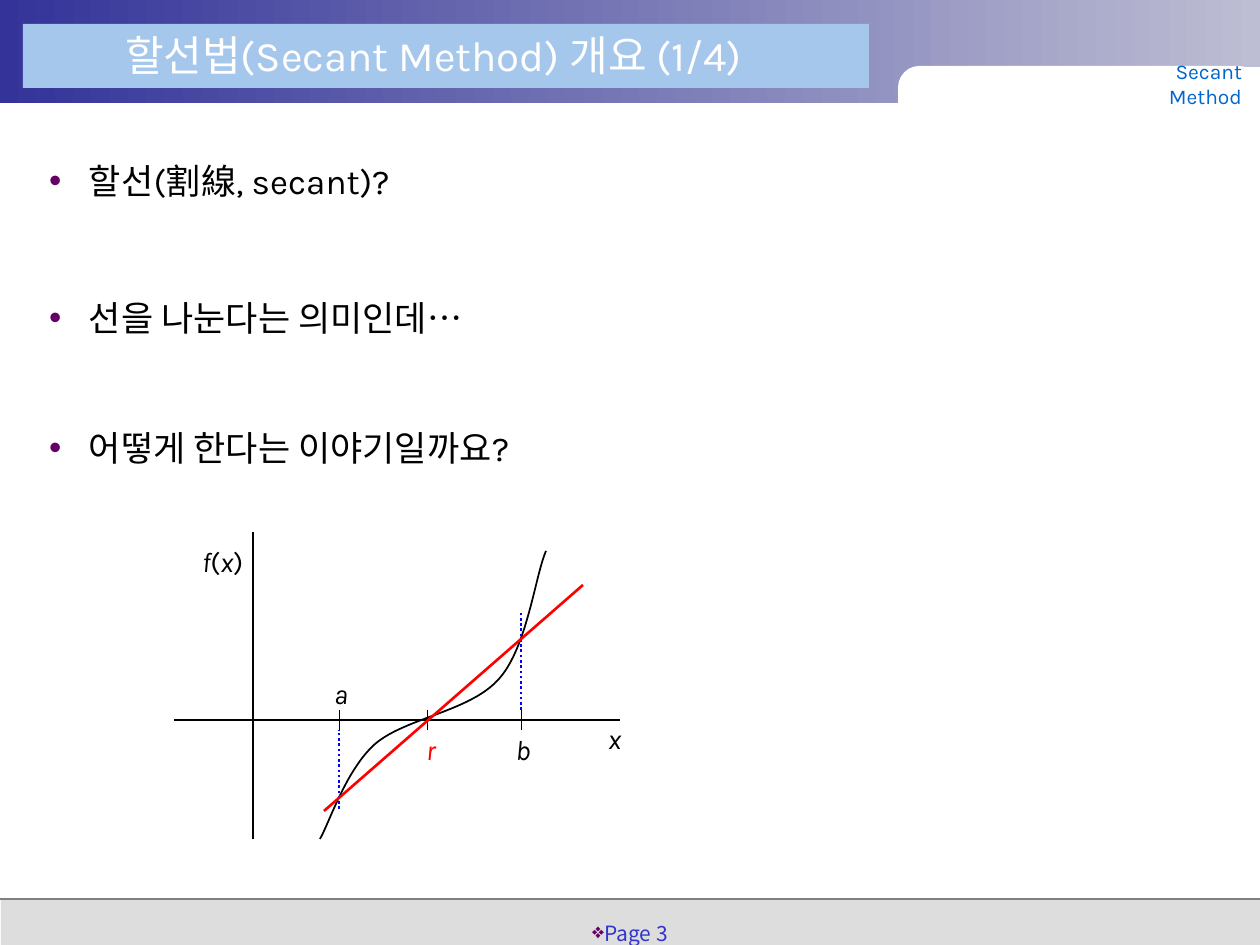
import pptx
import pptx.util
import pptx.dml.color
import pptx.enum.dml
import pptx.enum.shapes
import pptx.enum.text
import pptx.oxml
import pptx.oxml.ns
import lxml.etree

PX = 914400 / 126
SHAPE = pptx.enum.shapes.MSO_SHAPE
ALIGN = pptx.enum.text.PP_ALIGN
ANCHOR = pptx.enum.text.MSO_ANCHOR
DOT = pptx.enum.dml.MSO_LINE.ROUND_DOT


class Theme:
    font, cjk = "Karla", "Noto Sans CJK KR"
    title, body, label, small = 24, 20, 16, 12
    white, black, red, blue = "FFFFFF", "000000", "FF0000", "0000FF"
    navy, haze, panel, foot = "333399", "BDBDD3", "A6C7EC", "DDDDDD"
    gray, bullet, page, topic = "808080", "660066", "3333CC", "0066CC"


TITLE = ("할선법(Secant Method) 개요 (1/4)", (112, 23, 756, 63))
ITEMS = [  # text, top, height
    ("할선(割線, secant)?", 146, 69),
    ("선을 나눈다는 의미인데…", 283, 60),
    ("어떻게 한다는 이야기일까요?", 413, 60),
]
BARS = [  # shape, box, fill
    (SHAPE.RECTANGLE, (1, 900, 1259, 45), Theme.foot),
    (SHAPE.RECTANGLE, (0, 0, 1260, 103), None),
    (SHAPE.ROUNDED_RECTANGLE, (898, 66, 362, 74), Theme.white),
    (SHAPE.RECTANGLE, (1147, 67, 113, 30), Theme.white),
    (SHAPE.RECTANGLE, (23, 24, 846, 64), Theme.panel),
]
AXIS = 720
A, R, B = 339, 427, 521
AXES = [(174, AXIS, 620, AXIS), (253, 839, 253, 532)]
DROPS = [(A, 809, A, AXIS + 10), (B, AXIS - 10, B, 611)]
SECANT = (324, 811, 583, 585)
CURVE = [(320, 839), (329, 824), (345, 772), (374, 745), (404, 718),
         (470, 712), (499, 679), (527, 648), (535, 577), (546, 551)]
LABELS = [  # text, left, top, width, colour
    ("f(x)", 193, 532, 59, Theme.black),
    ("a", 326, 664, 30, Theme.black),
    ("b", 508, 720, 30, Theme.black),
    ("x", 585, 709, 59, Theme.black),
    ("r", 416, 720, 30, Theme.red),
]


def emu(*vals):
    return [pptx.util.Emu(round(v * PX)) for v in vals]


def rgb(code):
    return pptx.dml.color.RGBColor.from_string(code)


def style(run, size, color, font=Theme.font, italic=False):
    run.font.name, run.font.size = font, pptx.util.Pt(size)
    run.font.bold, run.font.italic = False, italic
    run.font.color.rgb = rgb(color)


def frame(shape, insets, anchor=ANCHOR.TOP):
    """Fix the wrap, insets (left, top, right, bottom) and anchor."""
    text = shape.text_frame
    text.auto_size = pptx.enum.text.MSO_AUTO_SIZE.NONE
    text.word_wrap, text.vertical_anchor = True, anchor
    (text.margin_left, text.margin_top,
     text.margin_right, text.margin_bottom) = emu(*insets)
    return text


def place(shape, box):
    shape.left, shape.top, shape.width, shape.height = emu(*box)


def mark(para, char, hang):
    """Give the paragraph a bullet with a hanging indent."""
    props = para._p.get_or_add_pPr()
    size = emu(hang)[0]
    props.set("marL", str(size))
    props.set("indent", str(-size))
    tint = lxml.etree.SubElement(props, pptx.oxml.ns.qn("a:buClr"))
    lxml.etree.SubElement(tint, pptx.oxml.ns.qn("a:srgbClr"), val=Theme.bullet)
    lxml.etree.SubElement(props, pptx.oxml.ns.qn("a:buChar"), char=char)


def bar(shapes, kind, box, color):
    shape = shapes.add_shape(kind, *emu(*box))
    shape.shadow.inherit = False
    shape.line.fill.background()
    if color:
        shape.fill.solid()
        shape.fill.fore_color.rgb = rgb(color)
    else:
        shape.fill.gradient()
        shape.fill.gradient_angle = 0
        for stop, tone in zip(shape.fill.gradient_stops, (Theme.navy, Theme.haze)):
            stop.color.rgb = rgb(tone)
    if kind == SHAPE.ROUNDED_RECTANGLE:
        shape.adjustments[0] = 0.29


def rule(shapes, ends, color=Theme.black, width=1, dash=None):
    """Draw a straight line."""
    line = shapes.add_connector(pptx.enum.shapes.MSO_CONNECTOR.STRAIGHT, *emu(*ends))
    line.line.color.rgb = rgb(color)
    line.line.width = pptx.util.Pt(width)
    if dash:
        line.line.dash_style = dash
    lxml.etree.SubElement(line._element.spPr, pptx.oxml.ns.qn("a:effectLst"))


def bezier(points, steps=20):
    """Sample joined cubic arcs that share their end points."""
    for i in range(0, len(points) - 1, 3):
        arc = points[i:i + 4]
        for n in range(1, steps + 1):
            t = n / steps
            parts = ((1 - t) ** 3, 3 * t * (1 - t) ** 2, 3 * t * t * (1 - t), t ** 3)
            yield emu(*(sum(w * p[k] for w, p in zip(parts, arc)) for k in (0, 1)))


def graph(shapes):
    for ends in AXES:
        rule(shapes, ends)
    pen = shapes.build_freeform(*emu(*CURVE[0]), scale=1.0)
    pen.add_line_segments(list(bezier(CURVE)), close=False)
    curve = pen.convert_to_shape()
    curve.shadow.inherit = False
    curve.fill.background()
    curve.line.color.rgb = rgb(Theme.black)
    curve.line.width = pptx.util.Pt(1)
    for x in (A, R, B):
        rule(shapes, (x, AXIS + 10, x, AXIS - 10), width=0.5)
    for ends in DROPS:
        rule(shapes, ends, Theme.blue, 1.5, DOT)
    rule(shapes, SECANT, Theme.red, 1.5)
    for text, left, top, width, color in LABELS:
        box = shapes.add_textbox(*emu(left, top, width, 46))
        para = frame(box, (0, 0, 0, 0), ANCHOR.MIDDLE).paragraphs[0]
        para.alignment, para.line_spacing = ALIGN.CENTER, 1.4
        for char in text:
            run = para.add_run()
            run.text = char
            style(run, Theme.label, color, italic=char.isalpha())


def heads(slide):
    """Fill the title and the list placeholders, above the bars."""
    title, *bodies = list(slide.placeholders)
    for spare in bodies[len(ITEMS):]:
        spare._element.getparent().remove(spare._element)
    for shape in (title, *bodies[:len(ITEMS)]):
        slide.shapes._spTree.append(shape._element)
    place(title, TITLE[1])
    text = frame(title, (13, 6, 13, 6))
    text.text = TITLE[0]
    text.paragraphs[0].alignment = ALIGN.LEFT
    style(text.paragraphs[0].runs[0], Theme.title, Theme.white)
    for body, (words, top, height) in zip(bodies, ITEMS):
        place(body, (44, top, 1181, height))
        text = frame(body, (5, 5, 5, 5))
        text.text = words
        para = text.paragraphs[0]
        mark(para, "•", 40)
        para.line_spacing, para.space_before = 1.2, pptx.util.Pt(0)
        style(para.runs[0], Theme.body, Theme.black)


def notes(shapes):
    """Add the page number and the topic tag."""
    text = frame(shapes.add_textbox(*emu(573, 907, 114, 35)), (0, 16, 0, 0))
    text.text = "Page 3"
    para = text.paragraphs[0]
    mark(para, "❖", 0)
    para.alignment, para.line_spacing = ALIGN.CENTER, 0.9
    style(para.runs[0], Theme.small, Theme.page, Theme.cjk)
    text = frame(shapes.add_textbox(*emu(1100, 66, 147, 35)), (40, 5, 5, 5), ANCHOR.MIDDLE)
    text.text = "Secant Method"
    text.paragraphs[0].alignment = ALIGN.RIGHT
    style(text.paragraphs[0].runs[0], Theme.small, Theme.topic)


def main():
    deck = pptx.Presentation()
    deck.slide_width, deck.slide_height = emu(1260, 945)
    slide = deck.slides.add_slide(deck.slide_layouts.get_by_name("Comparison"))
    for kind, box, color in BARS:
        bar(slide.shapes, kind, box, color)
    rule(slide.shapes, (0, 899, 1260, 899), Theme.gray)
    heads(slide)
    graph(slide.shapes)
    notes(slide.shapes)
    deck.save("out.pptx")


if __name__ == "__main__":
    main()
